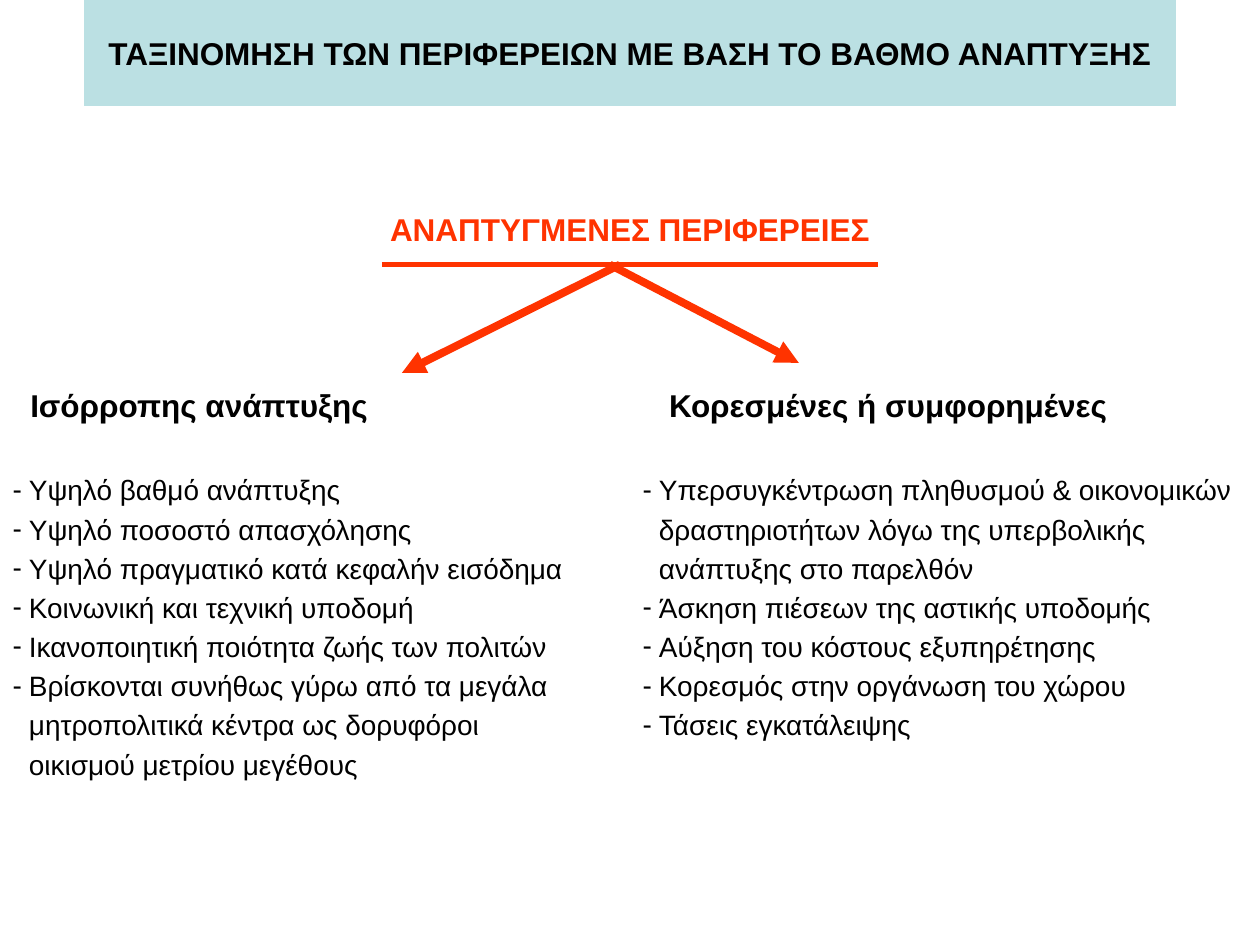
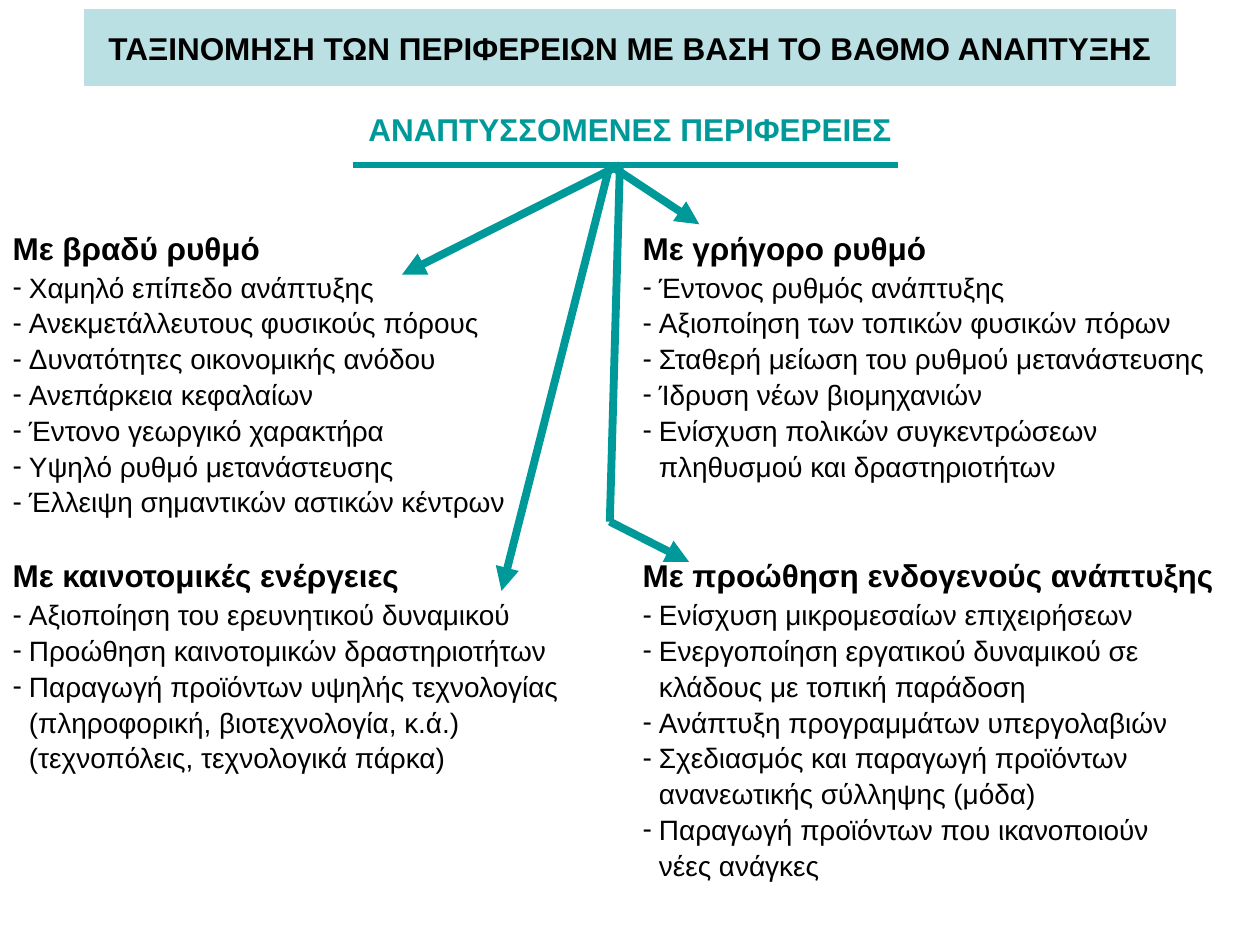
"""Build two slides that class regions by their level of growth."""
import pptx
import pptx.util
import pptx.dml.color
import pptx.enum.shapes
import pptx.enum.text
import pptx.oxml.ns
from lxml import etree

Inches = pptx.util.Inches
Pt = pptx.util.Pt
RGBColor = pptx.dml.color.RGBColor
Align = pptx.enum.text.PP_ALIGN
Anchor = pptx.enum.text.MSO_ANCHOR
qn = pptx.oxml.ns.qn

BAND = RGBColor(0xBB, 0xE0, 0xE3)
BLACK = RGBColor(0, 0, 0)
RED = RGBColor(0xFF, 0x33, 0)
TEAL = RGBColor(0, 0x99, 0x99)
TITLE = "ΤΑΞΙΝΟΜΗΣΗ ΤΩΝ ΠΕΡΙΦΕΡΕΙΩΝ ΜΕ ΒΑΣΗ ΤΟ ΒΑΘΜΟ ΑΝΑΠΤΥΞΗΣ"
LEFT, RIGHT = 0.1, 5.1
HANG = 0.13

pages = [
    {
        "layout": 3, "band": (0, 0.84), "color": RED,
        "topic": "ΑΝΑΠΤΥΓΜΕΝΕΣ ΠΕΡΙΦΕΡΕΙΕΣ", "topic_y": 1.62,
        "rule": (3.03, 6.97, 2.1),
        "arrows": [(4.92, 2.1, 3.19, 2.96, True), (4.84, 2.1, 6.34, 2.88, True)],
        "pitch": 22.4, "gap": 25,
        "lists": [
            (LEFT, 3.05, 3.3, 0.14, "Ισόρροπης ανάπτυξης", [
                "Υψηλό βαθμό ανάπτυξης",
                "Υψηλό ποσοστό απασχόλησης",
                "Υψηλό πραγματικό κατά κεφαλήν εισόδημα",
                "Κοινωνική και τεχνική υποδομή",
                "Ικανοποιητική ποιότητα ζωής των πολιτών",
                "Βρίσκονται συνήθως γύρω από τα μεγάλα\n"
                "μητροπολιτικά κέντρα ως δορυφόροι\nοικισμού μετρίου μεγέθους",
            ]),
            (RIGHT, 3.05, 3.3, 0.21, "Κορεσμένες ή συμφορημένες", [
                "Υπερσυγκέντρωση πληθυσμού & οικονομικών\n"
                "δραστηριοτήτων λόγω της υπερβολικής\nανάπτυξης στο παρελθόν",
                "Άσκηση πιέσεων της αστικής υποδομής",
                "Αύξηση του κόστους εξυπηρέτησης",
                "Κορεσμός στην οργάνωση του χώρου",
                "Τάσεις εγκατάλειψης",
            ]),
        ],
    },
    {
        "layout": 4, "band": (0.08, 0.6), "color": TEAL,
        "topic": "ΑΝΑΠΤΥΣΣΟΜΕΝΕΣ ΠΕΡΙΦΕΡΕΙΕΣ", "topic_y": 0.82,
        "rule": (2.8, 7.13, 1.31),
        "arrows": [
            (4.92, 1.31, 3.19, 2.18, True), (4.84, 1.31, 5.55, 1.78, True),
            (4.92, 1.31, 4.84, 4.14, False), (4.84, 4.14, 5.47, 4.46, True),
            (4.84, 1.31, 3.98, 4.69, True),
        ],
        "pitch": 20.45, "gap": 1,
        "lists": [
            (LEFT, 1.83, 2.4, 0, "Με βραδύ ρυθμό", [
                "Χαμηλό επίπεδο ανάπτυξης",
                "Ανεκμετάλλευτους φυσικούς πόρους",
                "Δυνατότητες οικονομικής ανόδου",
                "Ανεπάρκεια κεφαλαίων",
                "Έντονο γεωργικό χαρακτήρα",
                "Υψηλό ρυθμό μετανάστευσης",
                "Έλλειψη σημαντικών αστικών κέντρων",
            ]),
            (LEFT, 4.43, 2.8, 0, "Με καινοτομικές ενέργειες", [
                "Αξιοποίηση του ερευνητικού δυναμικού",
                "Προώθηση καινοτομικών δραστηριοτήτων",
                "Παραγωγή προϊόντων υψηλής τεχνολογίας\n"
                "(πληροφορική, βιοτεχνολογία, κ.ά.)\n(τεχνοπόλεις, τεχνολογικά πάρκα)",
            ]),
            (RIGHT, 1.83, 2.4, 0, "Με γρήγορο ρυθμό", [
                "Έντονος ρυθμός ανάπτυξης",
                "Αξιοποίηση των τοπικών φυσικών πόρων",
                "Σταθερή μείωση του ρυθμού μετανάστευσης",
                "Ίδρυση νέων βιομηχανιών",
                "Ενίσχυση πολικών συγκεντρώσεων\nπληθυσμού και δραστηριοτήτων",
            ]),
            (RIGHT, 4.43, 2.8, 0, "Με προώθηση ενδογενούς ανάπτυξης", [
                "Ενίσχυση μικρομεσαίων επιχειρήσεων",
                "Ενεργοποίηση εργατικού δυναμικού σε\nκλάδους με τοπική παράδοση",
                "Ανάπτυξη προγραμμάτων υπεργολαβιών",
                "Σχεδιασμός και παραγωγή προϊόντων\nανανεωτικής σύλληψης (μόδα)",
                "Παραγωγή προϊόντων που ικανοποιούν\nνέες ανάγκες",
            ]),
        ],
    },
]


def write(para, text, size, bold, color=BLACK):
    """Add text run by run, with a line break at each newline."""
    para.space_before = Pt(0)
    for row, part in enumerate(text.split("\n")):
        if row:
            para.add_line_break()
            etree.SubElement(para._p[-1], qn("a:rPr"), sz=str(size * 100))
        run = para.add_run()
        run.text = part
        run.font.name = "Arial"
        run.font.size = Pt(size)
        run.font.bold = bold
        run.font.color.rgb = color


def frame(shape, x, y, wide, high, anchor):
    """Place a shape and return its text frame without margins."""
    shape.left, shape.top = Inches(x), Inches(y)
    shape.width, shape.height = Inches(wide), Inches(high)
    text = shape.text_frame
    text.margin_left = text.margin_right = text.margin_top = text.margin_bottom = 0
    text.word_wrap = True
    text.auto_size = pptx.enum.text.MSO_AUTO_SIZE.NONE
    text.vertical_anchor = anchor
    return text


deck = pptx.Presentation()
deck.slide_width, deck.slide_height = Inches(10), Inches(7.5)

for page in pages:
    slide = deck.slides.add_slide(deck.slide_layouts[page["layout"]])
    title = slide.shapes.title
    title.fill.solid()
    title.fill.fore_color.rgb = BAND
    title.line.color.rgb = BAND
    title.line.width = Pt(0.75)
    top, high = page["band"]
    para = frame(title, 0.67, top, 8.66, high, Anchor.MIDDLE).paragraphs[0]
    para.alignment = Align.CENTER
    write(para, TITLE, 18, True)

    topic = slide.shapes.add_textbox(0, 0, 0, 0)
    para = frame(topic, 2.5, page["topic_y"], 5, 0.4, Anchor.MIDDLE).paragraphs[0]
    para.alignment = Align.CENTER
    write(para, page["topic"], 18, True, page["color"])

    bodies = [hold for hold in slide.placeholders if hold.placeholder_format.idx in (1, 2, 3, 4)]
    for body, (x, y, high, inset, head, items) in zip(bodies, page["lists"]):
        text = frame(body, x, y, 4.8, high, Anchor.TOP)
        para = text.paragraphs[0]
        para.line_spacing = Pt(page["pitch"])
        para.space_after = Pt(page["gap"])
        write(para, head, 18, True)
        props = para._p.get_or_add_pPr()
        props.set("marL", str(Inches(inset)))
        props.set("indent", "0")
        etree.SubElement(props, qn("a:buNone"))
        for item in items:
            para = text.add_paragraph()
            para.line_spacing = Pt(page["pitch"])
            write(para, item, 16, False)
            props = para._p.get_or_add_pPr()
            props.set("marL", str(Inches(HANG)))
            props.set("indent", str(-Inches(HANG)))
            etree.SubElement(props, qn("a:buFont"), typeface="Arial")
            etree.SubElement(props, qn("a:buChar"), char="-")

    left, right, level = page["rule"]
    lines = [(left, level, right, level, False, 3)]
    lines += [arrow + (4.5,) for arrow in page["arrows"]]
    for x1, y1, x2, y2, tip, width in lines:
        line = slide.shapes.add_connector(
            pptx.enum.shapes.MSO_CONNECTOR.STRAIGHT,
            Inches(x1), Inches(y1), Inches(x2), Inches(y2))
        line.line.color.rgb = page["color"]
        line.line.width = Pt(width)
        props = line._element.spPr
        if tip:
            etree.SubElement(props.find(qn("a:ln")), qn("a:tailEnd"), type="triangle")
        etree.SubElement(props, qn("a:effectLst"))

deck.save("out.pptx")
